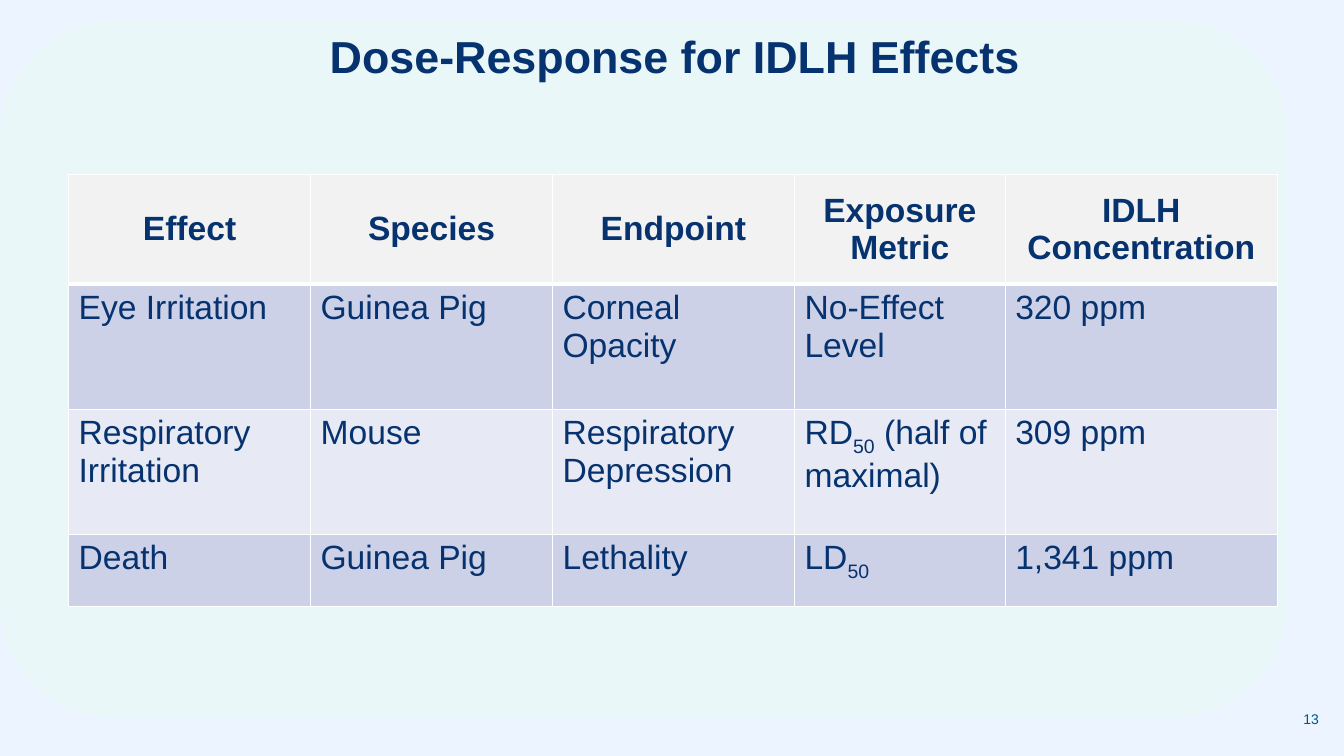
"""Build the dose-response slide with its table of IDLH effects."""
import pptx
import pptx.util
import pptx.dml.color
import pptx.enum.shapes
import pptx.enum.text
import lxml.etree
from dataclasses import dataclass

TITLE = "Dose-Response for IDLH Effects"
NUMBER = "13"
ROWS = [
    ("Effect", "Species", "Endpoint", "Exposure Metric", "IDLH Concentration"),
    ("Eye Irritation", "Guinea Pig", "Corneal Opacity", "No-Effect Level", "320 ppm"),
    ("Respiratory Irritation", "Mouse", "Respiratory Depression",
     "RD_50_ (half of maximal)", "309 ppm"),
    ("Death", "Guinea Pig", "Lethality", "LD_50_", "1,341 ppm"),
]
WIDTHS = (2.4, 2.4, 2.4, 2.09, 2.7)
HEIGHTS = (1.09, 1.24, 1.24, 0.72)


@dataclass(frozen=True)
class Theme:
    """Colours, font and type sizes."""
    back: str = "ECF5FF"
    panel: str = "EAF7F8"
    ink: str = "06336F"
    page: str = "00538A"
    head: str = "F2F2F2"
    bands: tuple = ("E7E9F4", "CCD1E8")
    rule: str = "FFFFFF"
    font: str = "Arial"
    title: int = 32
    cell: int = 24
    small: int = 10


THEME = Theme()
Inches = pptx.util.Inches
Pt = pptx.util.Pt
ALIGN = pptx.enum.text.PP_ALIGN
ANCHOR = pptx.enum.text.MSO_ANCHOR


def paint(fill, color):
    """Give a fill one solid colour."""
    fill.solid()
    fill.fore_color.rgb = pptx.dml.color.RGBColor.from_string(color)


def write(para, text, size, color, bold=False, align=ALIGN.LEFT):
    """Add text in runs, with parts between underscores lowered."""
    para.alignment = align
    for i, part in enumerate(text.split("_")):
        if not part:
            continue
        run = para.add_run()
        run.text = part
        font = run.font
        font.name, font.size, font.bold = THEME.font, Pt(size), bold
        font.color.rgb = pptx.dml.color.RGBColor.from_string(color)
        if i % 2:
            run._r.get_or_add_rPr().set("baseline", "-25000")


def inset(frame, x, y):
    """Set the side and the top and bottom margins."""
    frame.margin_left = frame.margin_right = Inches(x)
    frame.margin_top = frame.margin_bottom = Inches(y)


def edge(cell, **sides):
    """Draw the cell borders at the given widths in points."""
    props = cell._tc.get_or_add_tcPr()
    space = "{http://schemas.openxmlformats.org/drawingml/2006/main}"
    for side, width in sides.items():
        line = lxml.etree.SubElement(props, space + "ln" + side, w=str(Pt(width)))
        solid = lxml.etree.SubElement(line, space + "solidFill")
        lxml.etree.SubElement(solid, space + "srgbClr", val=THEME.rule)


def add_title(slide):
    """Fill the title and set the rounded panel behind it."""
    title = slide.shapes.title
    title.left, title.top = Inches(1), Inches(0.11)
    title.width, title.height = Inches(11.39), Inches(0.89)
    frame = title.text_frame
    frame.vertical_anchor = ANCHOR.MIDDLE
    inset(frame, 0.04, 0.02)
    para = frame.paragraphs[0]
    para.space_after = Pt(2)
    write(para, TITLE, THEME.title, THEME.ink, True, ALIGN.CENTER)
    panel = slide.shapes.add_shape(
        pptx.enum.shapes.MSO_SHAPE.ROUNDED_RECTANGLE,
        Inches(0), Inches(0.2), Inches(12.77), Inches(6.92))
    panel.shadow.inherit = False
    paint(panel.fill, THEME.panel)
    panel.line.fill.background()
    title.element.addprevious(panel.element)


def add_grid(slide):
    """Add the table of effects."""
    table = slide.shapes.add_table(
        len(ROWS), len(WIDTHS), Inches(0.68), Inches(1.73),
        Inches(sum(WIDTHS)), Inches(sum(HEIGHTS))).table
    for col, width in zip(table.columns, WIDTHS):
        col.width = Inches(width)
    for r, (row, height) in enumerate(zip(ROWS, HEIGHTS)):
        table.rows[r].height = Inches(height)
        head = r == 0
        for c, text in enumerate(row):
            cell = table.cell(r, c)
            cell.vertical_anchor = ANCHOR.MIDDLE if head else ANCHOR.TOP
            edge(cell, L=1, R=1, T=3 if r == 1 else 1, B=3 if head else 1)
            paint(cell.fill, THEME.head if head else THEME.bands[r % 2])
            write(cell.text_frame.paragraphs[0], text, THEME.cell, THEME.ink,
                  head, ALIGN.CENTER if head else ALIGN.LEFT)


def add_page(slide):
    """Add the slide number."""
    box = slide.shapes.add_textbox(
        Inches(12.43), Inches(7.05), Inches(0.65), Inches(0.25))
    frame = box.text_frame
    frame.word_wrap = True
    inset(frame, 0, 0)
    write(frame.paragraphs[0], NUMBER, THEME.small, THEME.page, align=ALIGN.RIGHT)


def main():
    """Build and save the slide."""
    deck = pptx.Presentation()
    deck.slide_width, deck.slide_height = Inches(13.33), Inches(7.5)
    slide = deck.slides.add_slide(deck.slide_layouts[5])
    paint(slide.background.fill, THEME.back)
    add_title(slide)
    add_grid(slide)
    add_page(slide)
    deck.save("out.pptx")


if __name__ == "__main__":
    main()
